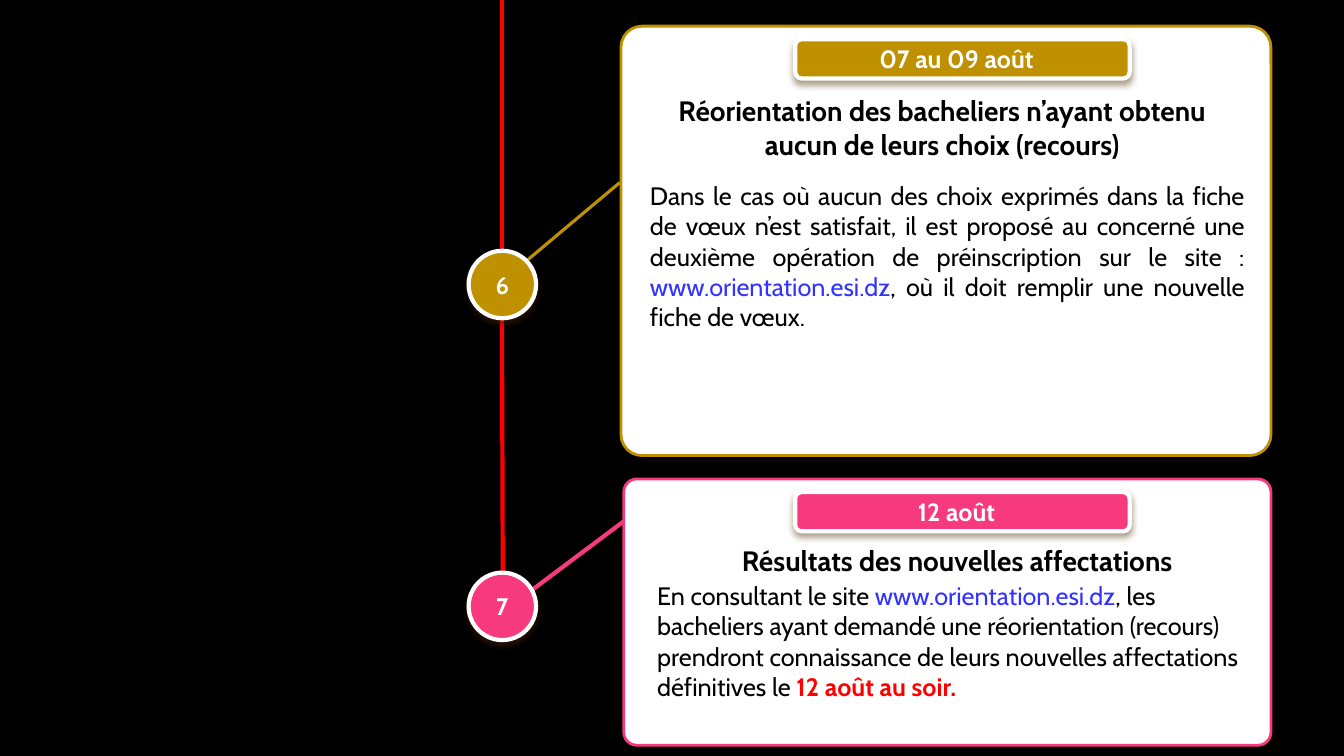
from lxml.etree import SubElement
from pptx import Presentation
from pptx.dml.color import RGBColor
from pptx.enum.shapes import MSO_CONNECTOR, MSO_SHAPE
from pptx.enum.text import MSO_ANCHOR, MSO_AUTO_SIZE, PP_ALIGN as Align
from pptx.oxml.ns import qn
from pptx.util import Cm, Pt

WHITE, BLACK, RED, LINK = "FFFFFF", "000000", "FF0000", "3333FF"
GOLD, PINK = "BF9000", "F63A7D"
SITE = "www.orientation.esi.dz"


def color(hex_value):
    return RGBColor.from_string(hex_value)


def write(frame, paragraphs, size, align=Align.CENTER, bold=False,
          fill=BLACK, anchor=MSO_ANCHOR.TOP):
    """Each paragraph is a list of (text, run colour, run bold) or plain text."""
    frame.word_wrap = True
    frame.auto_size = MSO_AUTO_SIZE.NONE
    frame.vertical_anchor = anchor
    for index, runs in enumerate(paragraphs):
        paragraph = frame.add_paragraph() if index else frame.paragraphs[0]
        paragraph.alignment = align
        for part in runs:
            text, run_fill, run_bold = (part, fill, bold) if isinstance(part, str) else part
            run = paragraph.add_run()
            run.text = text
            run.font.name = "Cabin"
            run.font.size = Pt(size)
            run.font.bold = run_bold
            run.font.color.rgb = color(run_fill)


presentation = Presentation()
presentation.slide_width, presentation.slide_height = Cm(33.87), Cm(19.05)
slide = presentation.slides.add_slide(presentation.slide_layouts[5])
slide.background.fill.solid()
slide.background.fill.fore_color.rgb = color(BLACK)
shapes = slide.shapes

# Timeline and links to the cards: start x, start y, end x, end y, colour, width
for x1, y1, x2, y2, line_color, width in [
    (12.65, 6.32, 12.65, 0, RED, 3),
    (12.65, 8.03, 12.67, 14.45, RED, 3),
    (13.26, 6.58, 15.62, 4.6, GOLD, 2.25),
    (13.31, 14.94, 15.82, 13.06, PINK, 3),
]:
    connector = shapes.add_connector(MSO_CONNECTOR.STRAIGHT, Cm(x1), Cm(y1), Cm(x2), Cm(y2))
    connector.line.color.rgb = color(line_color)
    connector.line.width = Pt(width)
    SubElement(connector._element.spPr, qn("a:effectLst"))

# Cards, date labels and numbered circles
steps = [
    ("6", "07 au 09 août", GOLD, (15.65, 0.66, 16.38, 10.82), 0.99, 6.32),
    ("7", "12 août", PINK, (15.72, 12.07, 16.31, 6.71), 12.4, 14.43),
]
for number, date, accent, card_box, date_top, circle_top in steps:
    card = shapes.add_shape(MSO_SHAPE.ROUNDED_RECTANGLE, *map(Cm, card_box))
    card.adjustments[0] = 0.049
    card.shadow.inherit = False
    card.fill.solid()
    card.fill.fore_color.rgb = color(WHITE)
    card.line.color.rgb = color(accent)
    card.line.width = Pt(2)

    for preset, box, text, size, shadow_color in [
        (MSO_SHAPE.ROUNDED_RECTANGLE, (20.04, date_top, 8.43, 0.99), date, 17.9, "594012"),
        (MSO_SHAPE.OVAL, (11.81, circle_top, 1.7, 1.7), number, 17.1, "4F2511"),
    ]:
        badge = shapes.add_shape(preset, *map(Cm, box))
        badge.fill.solid()
        badge.fill.fore_color.rgb = color(accent)
        badge.line.color.rgb = color(WHITE)
        badge.line.width = Pt(3)
        badge.shadow.inherit = False
        effects = badge._element.spPr.find(qn("a:effectLst"))
        shadow = SubElement(effects, qn("a:outerShdw"), blurRad=str(Pt(4.5)),
                            dist=str(Pt(3)), dir="5400000", rotWithShape="0")
        shade = SubElement(shadow, qn("a:srgbClr"), val=shadow_color)
        SubElement(shade, qn("a:alpha"), val="48000")
        frame = badge.text_frame
        if text == date:
            frame.margin_left, frame.margin_right = Cm(0.18), Cm(0.48)
            frame.margin_top = frame.margin_bottom = Cm(0.1)
        write(frame, [[text]], size, bold=True, fill=WHITE, anchor=MSO_ANCHOR.MIDDLE)

# Title on the first card, brought in front of it
title = shapes.title
title.left, title.top, title.width, title.height = map(Cm, (15.54, 2.24, 16.41, 1.96))
shapes._spTree.append(title._element)
write(title.text_frame, [["Réorientation des bacheliers n’ayant obtenu"],
                         ["aucun de leurs choix (recours)"]], 20, bold=True)

# Heading of the second card and both descriptions
for box, runs, options in [
    ((16.13, 4.42, 15.49, 4.11),
     ["Dans le cas où aucun des choix exprimés dans la fiche de vœux n’est satisfait, "
      "il est proposé au concerné une deuxième opération de préinscription sur le site : ",
      (SITE, LINK, False), ", où il doit remplir une nouvelle fiche de vœux."],
     dict(size=18, align=Align.JUSTIFY)),
    ((15.92, 13.56, 16.41, 1.12), ["Résultats des nouvelles affectations"],
     dict(size=20, bold=True)),
    ((16.31, 14.5, 15.49, 3.33),
     ["En consultant le site ", (SITE, LINK, False),
      ", les bacheliers ayant demandé une réorientation (recours) prendront "
      "connaissance de leurs nouvelles affectations définitives le ",
      ("12 août au soir.", RED, True)],
     dict(size=18, align=Align.LEFT)),
]:
    text_box = shapes.add_textbox(*map(Cm, box))
    write(text_box.text_frame, [runs], **options)

presentation.save("out.pptx")
